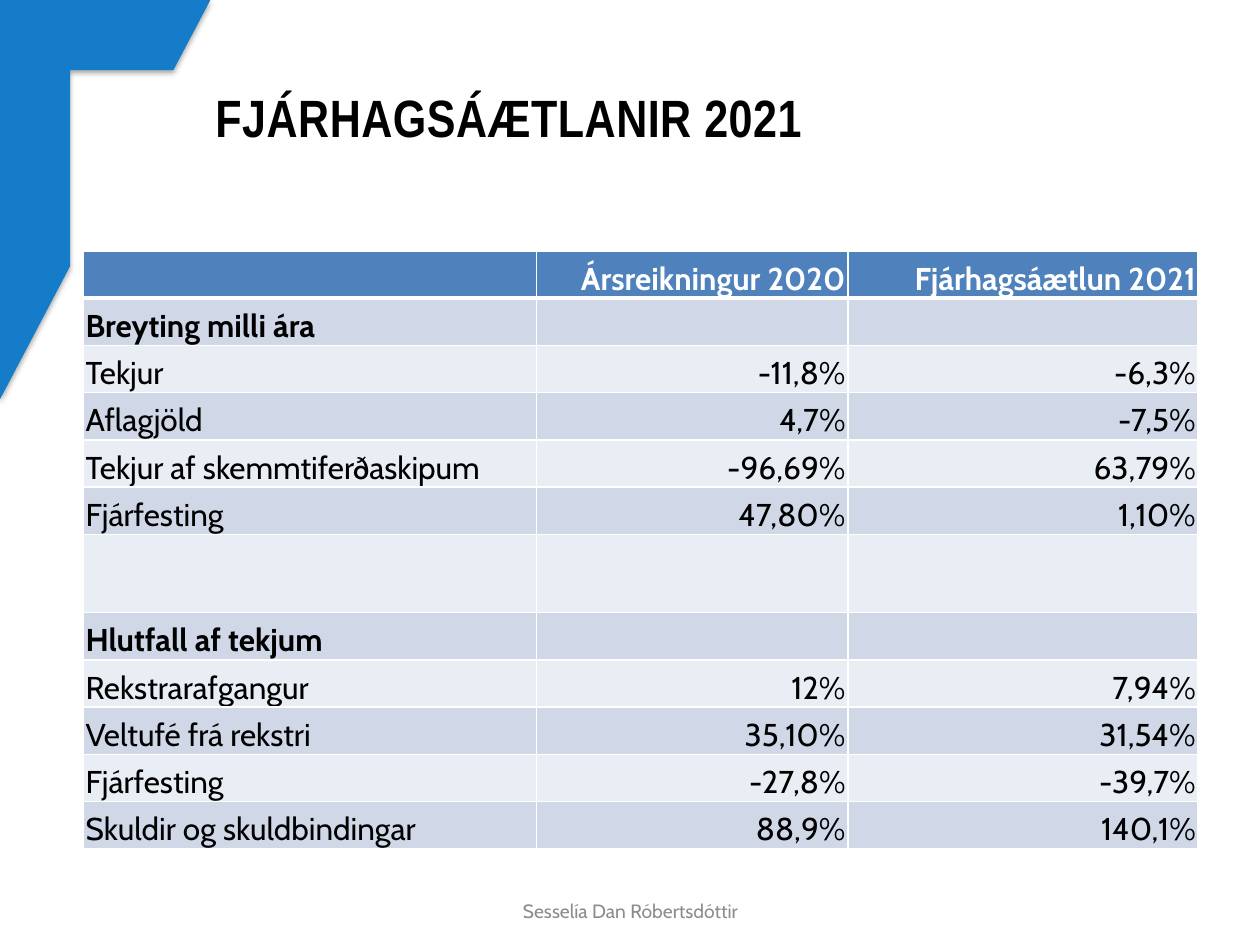
import lxml.etree
import pptx
import pptx.dml.color
import pptx.enum.shapes
import pptx.enum.text
import pptx.oxml
import pptx.oxml.ns
import pptx.util
from pptx.util import Inches

BLACK = pptx.dml.color.RGBColor(0x00, 0x00, 0x00)
WHITE = pptx.dml.color.RGBColor(0xFF, 0xFF, 0xFF)
GREY = pptx.dml.color.RGBColor(0x8C, 0x8C, 0x8C)
FRAME_BLUE = pptx.dml.color.RGBColor(0x14, 0x7C, 0xC8)
HEADER_BLUE = pptx.dml.color.RGBColor(0x4F, 0x81, 0xBD)
DARK_BAND = pptx.dml.color.RGBColor(0xD0, 0xD8, 0xE8)
LIGHT_BAND = pptx.dml.color.RGBColor(0xE9, 0xED, 0xF4)
NAMESPACE = pptx.oxml.ns.nsdecls("a")
ALIGN = pptx.enum.text.PP_ALIGN
ANCHOR = pptx.enum.text.MSO_ANCHOR


def add_run(paragraph, text, font_name, size, color, bold=False):
    run = paragraph.add_run()
    run.text = text
    run.font.name = font_name
    run.font.size = pptx.util.Pt(size)
    run.font.color.rgb = color
    run.font.bold = bold
    return run


def add_border(cell, side, width):
    cell._tc.get_or_add_tcPr().append(pptx.oxml.parse_xml(
        f'<a:ln{side} {NAMESPACE} w="{pptx.util.Pt(width)}"><a:solidFill>'
        f'<a:srgbClr val="{WHITE}"/></a:solidFill></a:ln{side}>'))


presentation = pptx.Presentation()
presentation.slide_width = Inches(10)
presentation.slide_height = Inches(7.5)
slide = presentation.slides.add_slide(presentation.slide_layouts[5])

frame = slide.shapes.add_shape(
    pptx.enum.shapes.MSO_SHAPE.HALF_FRAME, 0, 0, Inches(1.67), Inches(3.17))
frame.fill.solid()
frame.fill.fore_color.rgb = FRAME_BLUE
frame.line.fill.background()
frame.shadow.inherit = False
effects = frame._element.spPr.find(pptx.oxml.ns.qn("a:effectLst"))
effects.append(pptx.oxml.parse_xml(
    f'<a:outerShdw {NAMESPACE} blurRad="40000" dist="23000" dir="5400000" rotWithShape="0">'
    '<a:srgbClr val="000000"><a:alpha val="35000"/></a:srgbClr></a:outerShdw>'))

title = slide.shapes.title
title.left, title.top = Inches(1.61), Inches(0.3)
title.width, title.height = Inches(8.07), Inches(1.25)
title.text_frame.vertical_anchor = ANCHOR.MIDDLE
paragraph = title.text_frame.paragraphs[0]
paragraph.alignment = ALIGN.LEFT
run = add_run(paragraph, "FJÁRHAGSÁÆTLANIR 2021", "Arial Narrow", 30, BLACK, True)
run.font._element.set("spc", "30")

footer = slide.shapes.add_textbox(Inches(3.42), Inches(7.07), Inches(3.17), Inches(0.32))
footer.text_frame.word_wrap = True
footer.text_frame.vertical_anchor = ANCHOR.MIDDLE
paragraph = footer.text_frame.paragraphs[0]
paragraph.alignment = ALIGN.CENTER
paragraph.space_after = pptx.util.Pt(6)
add_run(paragraph, "Sesselía Dan Róbertsdóttir", "Cabin", 11, GREY)

rows = [
    ("", "Ársreikningur 2020", "Fjárhagsáætlun 2021"),
    ("Breyting milli ára", "", ""),
    ("Tekjur", "-11,8%", "-6,3%"),
    ("Aflagjöld", "4,7%", "-7,5%"),
    ("Tekjur af skemmtiferðaskipum", "-96,69%", "63,79%"),
    ("Fjárfesting", "47,80%", "1,10%"),
    ("", "", ""),
    ("Hlutfall af tekjum", "", ""),
    ("Rekstrarafgangur", "12%", "7,94%"),
    ("Veltufé frá rekstri", "35,10%", "31,54%"),
    ("Fjárfesting", "-27,8%", "-39,7%"),
    ("Skuldir og skuldbindingar", "88,9%", "140,1%"),
]
BOLD_ROWS = (0, 1, 7)
SPACER_ROW = 6
TABLE_HEIGHT = 4.75
SPACER_HEIGHT = 0.62
row_height = (TABLE_HEIGHT - SPACER_HEIGHT) / (len(rows) - 1)

table = slide.shapes.add_table(
    len(rows), 3, Inches(0.66), Inches(1.99), Inches(8.85), Inches(TABLE_HEIGHT)).table
for column, width in zip(table.columns, (3.6, 2.47, 2.78)):
    column.width = Inches(width)

for row_index, texts in enumerate(rows):
    table.rows[row_index].height = Inches(
        SPACER_HEIGHT if row_index == SPACER_ROW else row_height)
    if row_index == 0:
        fill_color, text_color = HEADER_BLUE, WHITE
    else:
        fill_color, text_color = (DARK_BAND if row_index % 2 else LIGHT_BAND), BLACK
    for column_index, text in enumerate(texts):
        cell = table.cell(row_index, column_index)
        cell.margin_left = cell.margin_right = cell.margin_top = Inches(0.02)
        cell.margin_bottom = 0
        cell.vertical_anchor = ANCHOR.BOTTOM
        add_border(cell, "L", 1)
        add_border(cell, "R", 1)
        add_border(cell, "T", 3 if row_index == 1 else 1)
        add_border(cell, "B", 3 if row_index == 0 else 1)
        cell.fill.solid()
        cell.fill.fore_color.rgb = fill_color
        if text:
            paragraph = cell.text_frame.paragraphs[0]
            paragraph.alignment = ALIGN.RIGHT if column_index else ALIGN.LEFT
            add_run(paragraph, text, "Cabin", 18, text_color, row_index in BOLD_ROWS)

presentation.save("out.pptx")
